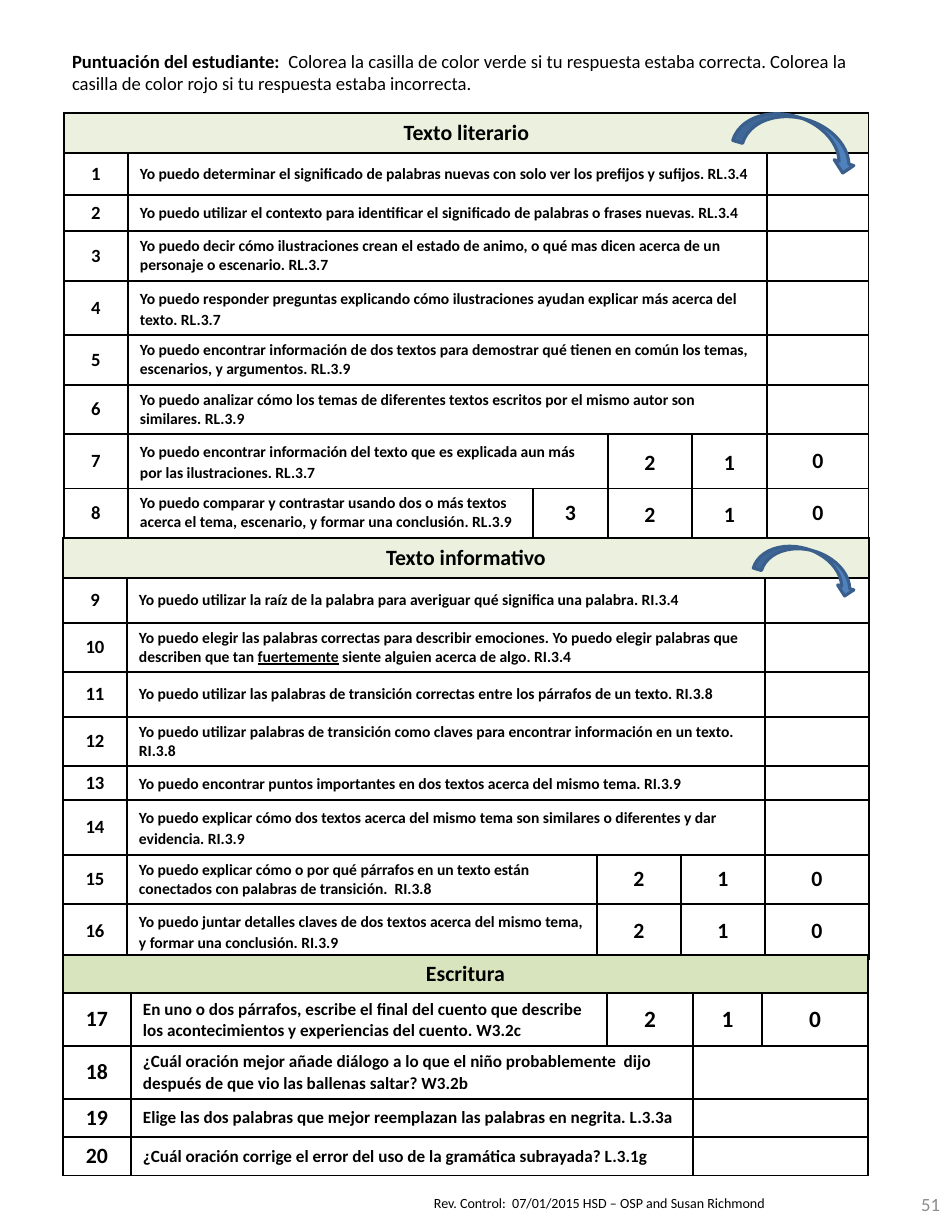
from dataclasses import dataclass

from lxml import etree
from pptx import Presentation
from pptx.dml.color import RGBColor
from pptx.enum.shapes import MSO_SHAPE
from pptx.enum.text import MSO_ANCHOR, PP_ALIGN
from pptx.oxml.ns import qn
from pptx.util import Emu, Pt

LEFT, CENTER, RIGHT = PP_ALIGN.LEFT, PP_ALIGN.CENTER, PP_ALIGN.RIGHT
TOP, MIDDLE = MSO_ANCHOR.TOP, MSO_ANCHOR.MIDDLE
ARROW = MSO_SHAPE.CURVED_DOWN_ARROW
SCALE = 914400 / 112


@dataclass(frozen=True)
class Theme:
    font: str = "Calibri"
    ink: str = "000000"
    paper: str = "FFFFFF"
    gray: str = "8C8C8C"
    pale: str = "EBF1DE"
    green: str = "D7E4BD"
    blue: str = "4F81BD"
    edge: str = "3A5F8C"
    note: int = 9
    body: int = 12
    head: int = 14
    loose: float = 1.15


THEME = Theme()
LOOSE = THEME.loose

STORY = [
    (42, "1", "Yo puedo determinar el significado de palabras nuevas con solo ver los prefijos y sufijos. RL.3.4", "", 1),
    (36, "2", "Yo puedo utilizar el contexto para identificar el significado de palabras o frases nuevas. RL.3.4", "", 1),
    (50, "3", "Yo puedo decir cómo ilustraciones crean el estado de animo, o qué mas dicen acerca de un personaje o escenario. RL.3.7", "", 1),
    (54, "4", "Yo puedo responder preguntas explicando cómo ilustraciones ayudan explicar más acerca del texto. RL.3.7", "", LOOSE),
    (50, "5", "Yo puedo encontrar información de dos textos para demostrar qué tienen en común los temas, escenarios, y argumentos. RL.3.9", "", 1),
    (49, "6", "Yo puedo analizar cómo los temas de diferentes textos escritos por el mismo autor son similares. RL.3.9", "", 1),
    (54, "7", "Yo puedo encontrar información del texto que es explicada aun más por las ilustraciones. RL.3.7", "210", LOOSE),
    (49, "8", "Yo puedo comparar y contrastar usando dos o más textos acerca el tema, escenario, y formar una conclusión. RL.3.9", "3210", 1),
]
FACTS = [
    (45, "9", "Yo puedo utilizar la raíz de la palabra para averiguar qué significa una palabra. RI.3.4", "", 1),
    (49, "10", "Yo puedo elegir las palabras correctas para describir emociones. Yo puedo elegir palabras que describen que tan _fuertemente_ siente alguien acerca de algo. RI.3.4", "", 1),
    (45, "11", "Yo puedo utilizar las palabras de transición correctas entre los párrafos de un texto. RI.3.8", "", 1),
    (49, "12", "Yo puedo utilizar palabras de transición como claves para encontrar información en un texto. RI.3.8", "", 1),
    (34, "13", "Yo puedo encontrar puntos importantes en dos textos acerca del mismo tema. RI.3.9", "", LOOSE),
    (55, "14", "Yo puedo explicar cómo dos textos acerca del mismo tema son similares o diferentes y dar evidencia. RI.3.9", "", LOOSE),
    (49, "15", "Yo puedo explicar cómo o por qué párrafos en un texto están conectados con palabras de transición.  RI.3.8", "210", 1),
    (55, "16", "Yo puedo juntar detalles claves de dos textos acerca del mismo tema, y formar una conclusión. RI.3.9", "210", LOOSE),
]
PROSE = [
    (53, "17", "En uno o dos párrafos, escribe el final del cuento que describe los acontecimientos y experiencias del cuento. W3.2c", "210", 1),
    (53, "18", "¿Cuál oración mejor añade diálogo a lo que el niño probablemente  dijo después de que vio las ballenas saltar? W3.2b", "", 1),
    (38, "19", "Elige las dos palabras que mejor reemplazan las palabras en negrita. L.3.3a", "", 1),
    (39, "20", "¿Cuál oración corrige el error del uso de la gramática subrayada? L.3.1g", "", 1),
]


def px(size):
    return Emu(round(size * SCALE))


def rgb(color):
    return RGBColor.from_string(color)


def apply(item, form):
    for name, value in form.items():
        setattr(item, name, value)


def write(para, text, size, bold=True, color=THEME.ink, line=False):
    run = para.add_run()
    run.text = text
    apply(run.font, {"name": THEME.font, "size": Pt(size), "bold": bold, "underline": line})
    run.font.color.rgb = rgb(color)


def add_box(slide, rect, parts, size, color=THEME.ink, align=LEFT, anchor=TOP):
    frame = slide.shapes.add_textbox(*map(px, rect)).text_frame
    apply(frame, {"word_wrap": True, "vertical_anchor": anchor, "margin_left": px(12), "margin_right": px(12)})
    para = frame.paragraphs[0]
    para.alignment = align
    for text, bold in parts:
        write(para, text, size, bold, color)


def add_arrow(slide, rect, angle):
    shape = slide.shapes.add_shape(ARROW, *map(px, rect))
    shape.rotation = angle
    shape.shadow.inherit = False
    shape.fill.solid()
    shape.fill.fore_color.rgb = rgb(THEME.blue)
    shape.line.color.rgb = rgb(THEME.edge)
    shape.line.width = Pt(2)


def style(cell, color):
    props = cell._tc.get_or_add_tcPr()
    for side in ("lnL", "lnR", "lnT", "lnB"):
        line = etree.SubElement(props, qn("a:" + side), w=str(Pt(1)))
        fill = etree.SubElement(line, qn("a:solidFill"))
        etree.SubElement(fill, qn("a:srgbClr"), val=THEME.ink)
    cell.fill.solid()
    cell.fill.fore_color.rgb = rgb(color)
    apply(cell, {"vertical_anchor": MIDDLE, "margin_left": px(12), "margin_right": px(12)})
    end = etree.SubElement(cell.text_frame.paragraphs[0]._p, qn("a:endParaRPr"))
    end.set("sz", "1000")


def put(cell, text, size, align=CENTER, lead=1):
    para = cell.text_frame.paragraphs[0]
    para.alignment = align
    if lead != 1:
        para.line_spacing = lead
    for i, part in enumerate(text.split("_")):
        write(para, part, size, line=i % 2 == 1)


def join(grid, row, first, last):
    if first < last:
        grid.cell(row, first).merge(grid.cell(row, last))


def add_grid(slide, left, top, cols, title, tall, tint, rows, sizes, blank=1, lead=1):
    highs = [tall] + [row[0] for row in rows]
    rect = (left, top, sum(cols), sum(highs))
    grid = slide.shapes.add_table(len(highs), len(cols), *map(px, rect)).table
    apply(grid, {"first_row": False, "horz_banding": False})
    for col, wide in zip(grid.columns, cols):
        col.width = px(wide)
    for i, (row, high) in enumerate(zip(grid.rows, highs)):
        row.height = px(high)
        for cell in row.cells:
            style(cell, THEME.paper if i else tint)
    last = len(cols) - 1
    join(grid, 0, 0, last)
    put(grid.cell(0, 0), title, THEME.head)
    label, body, score = sizes
    for i, (_, number, text, marks, gap) in enumerate(rows, 1):
        tail = len(cols) - (len(marks) or blank)
        join(grid, i, 1, tail - 1)
        put(grid.cell(i, 0), number, label)
        put(grid.cell(i, 1), text, body, LEFT, gap)
        if not marks:
            join(grid, i, tail, last)
        for j, mark in enumerate(marks, tail):
            put(grid.cell(i, j), mark, score, lead=lead if mark in "21" else 1)


def main():
    deck = Presentation()
    apply(deck, {"slide_width": px(952), "slide_height": px(1232)})
    slide = deck.slides.add_slide(deck.slide_layouts[6])
    add_box(slide, (422, 1189, 476, 29), [("Rev. Control:  07/01/2015 HSD – OSP and Susan Richmond", False)], THEME.note)
    add_box(slide, (849, 1176, 103, 56), [("51", False)], THEME.body, THEME.gray, RIGHT, MIDDLE)
    add_grid(slide, 64, 113, (64, 405, 75, 84, 75, 102), "Texto literario", 40, THEME.pale, STORY, (12, 10, 14), lead=LOOSE)
    add_grid(slide, 63, 538, (64, 470, 84, 84, 104), "Texto informativo", 40, THEME.pale, FACTS, (12, 10, 14))
    add_box(slide, (60, 44, 803, 57), [
        ("Puntuación del estudiante:  ", True),
        ("Colorea la casilla de color verde si tu respuesta estaba correcta. Colorea la casilla de color rojo si tu respuesta estaba incorrecta.", False),
    ], THEME.body)
    add_arrow(slide, (756, 550, 104, 34), 17)
    add_arrow(slide, (736, 118, 125, 41), 16.5)
    add_grid(slide, 63, 955, (68, 476, 86, 69, 106), "Escritura", 38, THEME.green, PROSE, (14, 11, 15), blank=2)
    deck.save("out.pptx")


if __name__ == "__main__":
    main()
